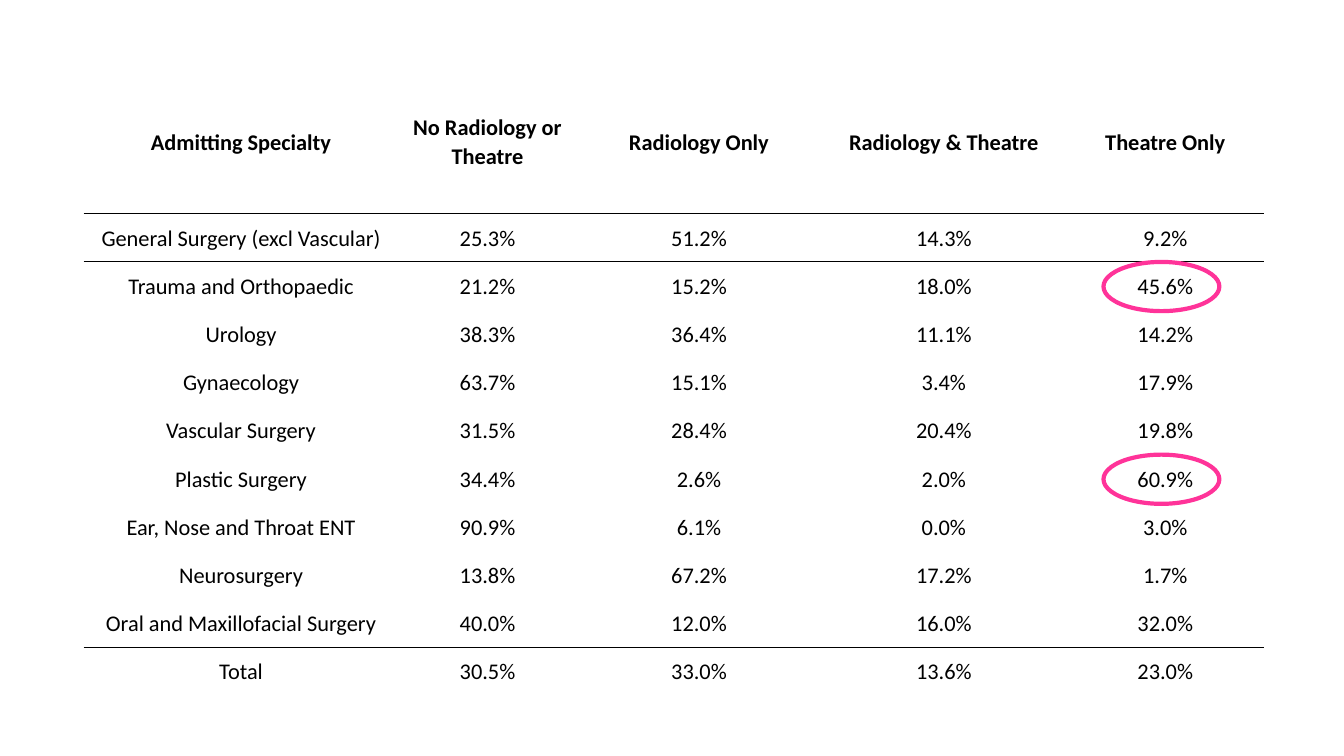
from lxml.etree import SubElement
from pptx import Presentation
from pptx.dml.color import RGBColor
from pptx.enum.shapes import MSO_SHAPE as Preset
from pptx.enum.text import MSO_ANCHOR as Anchor, PP_ALIGN as Align
from pptx.oxml import parse_xml
from pptx.oxml.ns import nsdecls, qn
from pptx.util import Cm, Pt

HEADINGS = ["Admitting Specialty", "No Radiology or Theatre", "Radiology Only",
            "Radiology & Theatre", "Theatre Only"]
SPECIALTIES = [
    ("General Surgery (excl Vascular)", 25.3, 51.2, 14.3, 9.2),
    ("Trauma and Orthopaedic", 21.2, 15.2, 18.0, 45.6),
    ("Urology", 38.3, 36.4, 11.1, 14.2),
    ("Gynaecology", 63.7, 15.1, 3.4, 17.9),
    ("Vascular Surgery", 31.5, 28.4, 20.4, 19.8),
    ("Plastic Surgery", 34.4, 2.6, 2.0, 60.9),
    ("Ear, Nose and Throat ENT", 90.9, 6.1, 0.0, 3.0),
    ("Neurosurgery", 13.8, 67.2, 17.2, 1.7),
    ("Oral and Maxillofacial Surgery", 40.0, 12.0, 16.0, 32.0),
    ("Total", 30.5, 33.0, 13.6, 23.0),
]
COLUMN_WIDTHS = [7.93, 4.49, 6.17, 6.17, 4.99]
LEFT, TOP = 2.11, 1.75
HEADER_HEIGHT, BODY_HEIGHT = 3.63, 12.14
ROW_HEIGHT = BODY_HEIGHT / len(SPECIALTIES)
HIGHLIGHTED = ["Trauma and Orthopaedic", "Plastic Surgery"]
NO_STYLE = "{2D5ABB26-0587-4C30-8999-92F81FD0307C}"


def colour(hex_code):
    return RGBColor.from_string(hex_code)


class SpecialtySlide:
    """Holds the style and the slide, and draws each kind of element."""

    font, size, ink, accent = "Calibri", 16, "000000", "FF3399"

    def __init__(self, deck):
        self.slide = deck.slides.add_slide(deck.slide_layouts[6])

    def table(self, rows, ruled_rows):
        frame = self.slide.shapes.add_table(
            len(rows), len(COLUMN_WIDTHS), Cm(LEFT), Cm(TOP),
            Cm(sum(COLUMN_WIDTHS)), Cm(HEADER_HEIGHT + BODY_HEIGHT))
        grid = frame.table
        grid.horz_banding = False
        grid._tbl.tblPr.find(qn("a:tableStyleId")).text = NO_STYLE
        for column, width in zip(grid.columns, COLUMN_WIDTHS):
            column.width = Cm(width)
        for index, texts in enumerate(rows):
            grid.rows[index].height = Cm(ROW_HEIGHT if index else HEADER_HEIGHT)
            for cell, text in zip(grid.rows[index].cells, texts):
                self.cell(cell, text, bold=index == 0)
                if index in ruled_rows:
                    self.rule(cell, "lnB")
                if index - 1 in ruled_rows:
                    self.rule(cell, "lnT")

    def cell(self, cell, text, bold):
        cell.fill.background()
        cell.vertical_anchor = Anchor.MIDDLE
        cell.margin_left = cell.margin_right = Cm(0.18)
        cell.margin_top = cell.margin_bottom = 0
        cell.text_frame.text = text
        paragraph = cell.text_frame.paragraphs[0]
        paragraph.alignment = Align.CENTER
        paragraph.line_spacing = 1.07
        paragraph.space_after = Pt(8)
        font = paragraph.runs[0].font
        font.name, font.size, font.bold = self.font, Pt(self.size), bold
        font.color.rgb = colour(self.ink)

    def rule(self, cell, side):
        border = parse_xml(f'<a:{side} {nsdecls("a")} w="{Pt(1)}"/>')
        fill = SubElement(border, qn("a:solidFill"))
        SubElement(fill, qn("a:srgbClr"), val=self.ink)
        cell._tc.get_or_add_tcPr().insert(0, border)

    def ring(self, left, top, width, height):
        ring = self.slide.shapes.add_shape(
            Preset.OVAL, Cm(left), Cm(top), Cm(width), Cm(height))
        ring.shadow.inherit = False
        ring.fill.background()
        ring.line.color.rgb = colour(self.accent)
        ring.line.width = Pt(3)


def main():
    deck = Presentation()
    deck.slide_width, deck.slide_height = Cm(33.87), Cm(19.05)
    page = SpecialtySlide(deck)
    body = [[name, *(f"{share:.1f}%" for share in shares)]
            for name, *shares in SPECIALTIES]
    page.table([HEADINGS, *body], ruled_rows={0, len(body) - 1})
    for index, (name, *_) in enumerate(SPECIALTIES):
        if name in HIGHLIGHTED:
            row_middle = TOP + HEADER_HEIGHT + (index + 0.5) * ROW_HEIGHT
            page.ring(27.81, row_middle - 0.6, 2.92, 1.24)
    deck.save("out.pptx")


if __name__ == "__main__":
    main()
